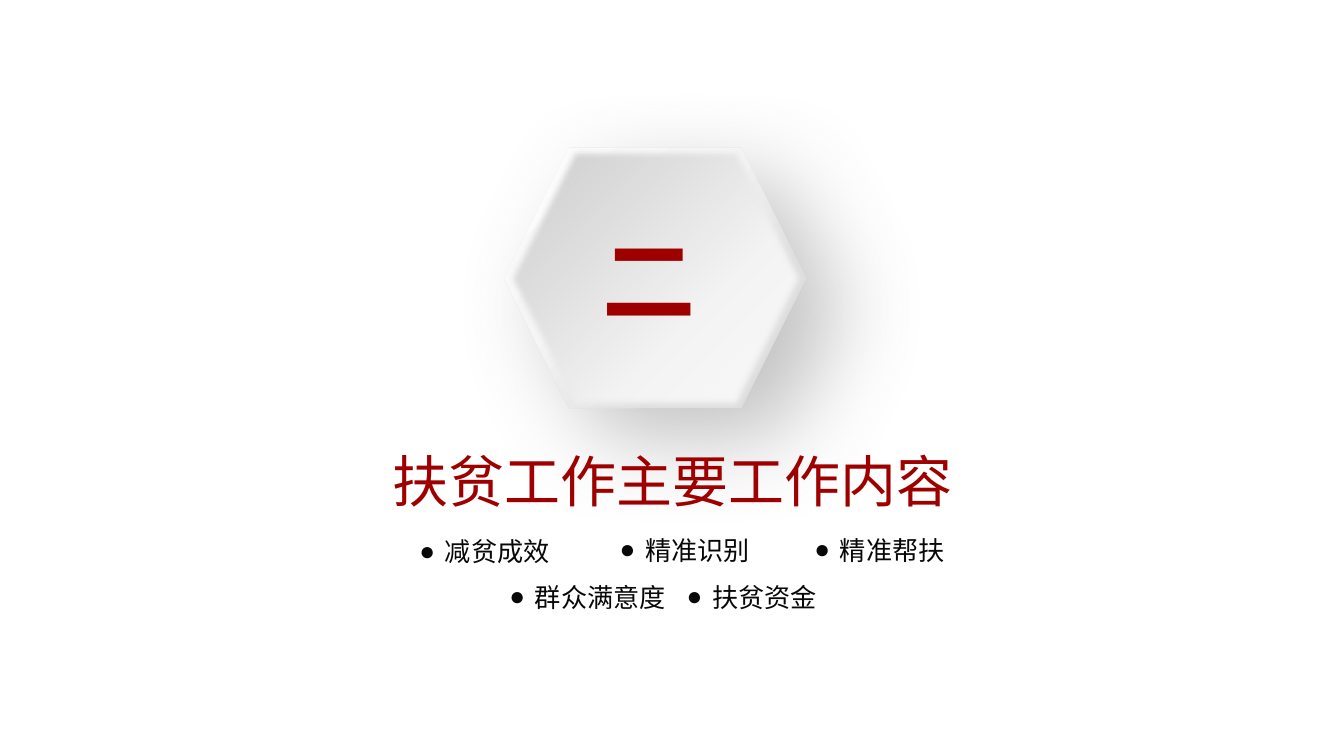
from lxml import etree
from pptx import Presentation
from pptx.dml.color import RGBColor
from pptx.enum.shapes import MSO_SHAPE
from pptx.enum.text import MSO_ANCHOR, PP_ALIGN
from pptx.oxml import parse_xml
from pptx.oxml.ns import nsdecls, qn
from pptx.util import Inches, Pt

HEXAGON = MSO_SHAPE.HEXAGON
MIDDLE = MSO_ANCHOR.MIDDLE
LEFT = PP_ALIGN.LEFT
FONT = "Noto Sans CJK SC"
BULLET_FONT = "Arial"
RED = RGBColor(0x9E, 0x00, 0x00)
INK = RGBColor(0x08, 0x08, 0x08)
SHADOW = RGBColor(0x69, 0x69, 0x69)


def grey(level):
    return RGBColor(level, level, level)


RIM_STOPS = [(1, grey(0xDE)), (30, grey(0xE0)), (61, grey(0xF6)), (100, grey(0xFF))]
FACE_STOPS = [(0, grey(0xCB)), (32, grey(0xDE)), (64, grey(0xF3)), (100, grey(0xF9))]

TOPICS = [
    ("减贫成效", 3.12, 3.98),
    ("精准识别", 4.61, 3.97),
    ("精准帮扶", 6.06, 3.97),
    ("群众满意度", 3.79, 4.32),
    ("扶贫资金", 5.11, 4.32),
]


def write(frame, text, size, color, bold=False, margins=(0, 0), wrap=True):
    frame.word_wrap = wrap
    frame.vertical_anchor = MIDDLE
    frame.margin_left = frame.margin_right = Inches(margins[0])
    frame.margin_top = frame.margin_bottom = Inches(margins[1])
    paragraph = frame.paragraphs[0]
    paragraph.text = text
    paragraph.alignment = LEFT
    run = paragraph.runs[0]
    font = run.font
    font.name, font.size, font.bold = FONT, Pt(size), bold
    font.color.rgb = color
    etree.SubElement(font._element, qn("a:ea")).set("typeface", FONT)


def add_hexagon(group, box, stops, angle, effect):
    """Add a hexagon with a gradient at a clockwise angle and one effect."""
    hexagon = group.shapes.add_shape(HEXAGON, *map(Inches, box))
    hexagon.line.fill.background()
    marks = "".join(
        f'<a:gs pos="{percent * 1000}"><a:srgbClr val="{color}"/></a:gs>'
        for percent, color in stops)
    properties = hexagon._element.spPr
    properties.find(qn("a:ln")).addprevious(parse_xml(
        f'<a:gradFill {nsdecls("a")} rotWithShape="1"><a:gsLst>{marks}</a:gsLst>'
        f'<a:lin ang="{angle * 60000}" scaled="0"/></a:gradFill>'))
    properties.append(parse_xml(
        f'<a:effectLst {nsdecls("a")}>{effect}</a:effectLst>'))


def add_badge(slide, left, top, width, height, number):
    shadow = (f'<a:outerShdw blurRad="{Pt(49)}" dist="{Pt(25)}" dir="{40 * 60000}" '
              f'algn="ctr" rotWithShape="0"><a:srgbClr val="{SHADOW}">'
              '<a:alpha val="40000"/></a:srgbClr></a:outerShdw>')
    soft_edge = f'<a:softEdge rad="{Pt(3.5)}"/>'
    box = (left, top, width, height)
    badge = slide.shapes.add_group_shape()
    add_hexagon(badge, box, RIM_STOPS, 225, shadow)
    add_hexagon(badge, box, FACE_STOPS, 45, soft_edge)
    numeral = badge.shapes.add_textbox(
        Inches(left + 0.73), Inches(top + 0.55), Inches(1.63), Inches(0.84))
    write(numeral.text_frame, number, 50, RED, bold=True)


def set_title(slide, left, top, width, height, text):
    title = slide.shapes.title
    title.left, title.top = Inches(left), Inches(top)
    title.width, title.height = Inches(width), Inches(height)
    write(title.text_frame, text, 30, RED, margins=(0.1, 0.05), wrap=False)
    # The title lies above the badge's shadow.
    slide.shapes._spTree.append(title._element)


def add_topic(slide, left, top, width, height, text):
    topic = slide.shapes.add_textbox(*map(Inches, (left, top, width, height)))
    properties = topic.text_frame.paragraphs[0]._p.get_or_add_pPr()
    properties.set("marL", str(Inches(0.19)))
    properties.set("indent", str(-Inches(0.19)))
    etree.SubElement(properties, qn("a:buFont")).set("typeface", BULLET_FONT)
    etree.SubElement(properties, qn("a:buChar")).set("char", "●")
    write(topic.text_frame, text, 14, INK)


def build_section_slide(presentation):
    slide = presentation.slides.add_slide(presentation.slide_layouts[5])
    add_badge(slide, 3.75, 1.1, 2.25, 1.94, "二")
    set_title(slide, 2.82, 3.27, 4.37, 0.6, "扶贫工作主要工作内容")
    for text, left, top in TOPICS:
        add_topic(slide, left, top, 2.2, 0.24, text)


def main():
    presentation = Presentation()
    presentation.slide_width = Inches(10)
    presentation.slide_height = Inches(10 * 9 / 16)
    build_section_slide(presentation)
    presentation.save("out.pptx")


if __name__ == "__main__":
    main()
